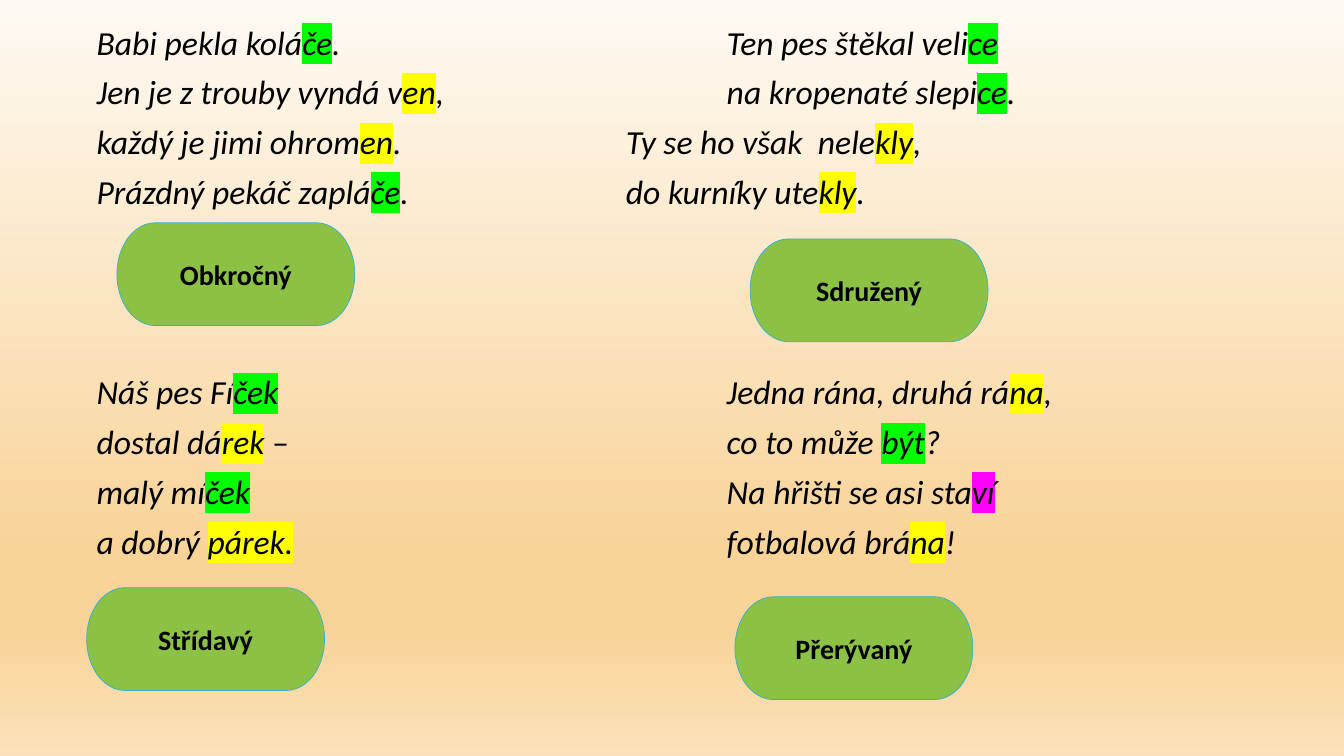
from lxml import etree
from pptx import Presentation
from pptx.dml.color import RGBColor
from pptx.enum.shapes import MSO_SHAPE
from pptx.enum.text import MSO_ANCHOR, PP_ALIGN
from pptx.oxml.ns import qn
from pptx.util import Inches, Pt

COLORS = {
    "text": "000000", "label": "8BC145", "label line": "36AFCE",
    "green": "00FF00", "yellow": "FFFF00", "pink": "FF00FF",
}
BACKGROUND_STOPS = [(0, "FEFAF3"), (74, "F9D398"), (83, "F9D398"), (100, "FBE2BA")]
FONT = "Calibri"
TERMINATOR = MSO_SHAPE.FLOWCHART_TERMINATOR
MIDDLE, CENTER = MSO_ANCHOR.MIDDLE, PP_ALIGN.CENTER

# Each line: tab stop of its right half, then spans; a (text, color) span is a rhyme.
FAR, NEAR = 6.25, 5.25
STANZAS = [
    [
        (FAR, ["Babi pekla kolá", ("če", "green"), ".\tTen pes štěkal veli", ("ce", "green")]),
        (FAR, ["Jen je z trouby vyndá v", ("en", "yellow"),
               ",\tna kropenaté slepi", ("ce", "green"), "."]),
        (NEAR, ["každý je jimi ohrom", ("en", "yellow"),
                ".\tTy se ho však  nele", ("kly", "yellow"), ","]),
        (NEAR, ["Prázdný pekáč zaplá", ("če", "green"),
                ".\tdo kurníky ute", ("kly", "yellow"), "."]),
    ],
    [
        (FAR, ["Náš pes Fí", ("ček", "green"), "\tJedna rána, druhá rá", ("na", "yellow"), ","]),
        (FAR, ["dostal dá", ("rek", "yellow"), " –\tco to může ", ("být", "green"), "?"]),
        (FAR, ["malý mí", ("ček", "green"), "\tNa hřišti se asi sta", ("ví", "pink")]),
        (FAR, ["a dobrý ", ("párek.", "yellow"), "\tfotbalová brá", ("na", "yellow"), "!"]),
    ],
]
LINE_GAP, STANZA_GAP = 9.6, 117.4
RHYME_LABELS = [
    ("Obkročný", 1.16, 2.21), ("Střídavý", 0.86, 5.83),
    ("Sdružený", 7.44, 2.37), ("Přerývaný", 7.29, 5.92),
]
LABEL_SIZE = (2.36, 1.02)


def rgb(name):
    return RGBColor.from_string(COLORS[name])


def style(span, size, bold=False, italic=False):
    font = span.font
    font.name, font.size, font.bold, font.italic = FONT, Pt(size), bold, italic
    font.color.rgb = rgb("text")


def add_color(parent, value):
    etree.SubElement(parent, qn("a:srgbClr"), val=value)


def highlight(span, color):
    mark = etree.Element(qn("a:highlight"))
    add_color(mark, COLORS[color])
    span.font._element.find(qn("a:solidFill")).addnext(mark)


def set_tab_stop(para, inches):
    tabs = etree.SubElement(para._p.get_or_add_pPr(), qn("a:tabLst"))
    etree.SubElement(tabs, qn("a:tab"), pos=str(Inches(inches)), algn="l")


def paint_background(page):
    fill = page.background.fill
    fill.gradient()
    fill.gradient_angle = 270
    stops = page._element.find(".//" + qn("a:gsLst"))
    for stop in list(stops):
        stops.remove(stop)
    for percent, value in BACKGROUND_STOPS:
        add_color(etree.SubElement(stops, qn("a:gs"), pos=str(percent * 1000)), value)


def add_poems(page):
    box = page.shapes.add_textbox(Inches(0.86), Inches(0.21), Inches(12.37), Inches(7.01))
    frame = box.text_frame
    frame.word_wrap = True
    for stanza_index, stanza in enumerate(STANZAS):
        for line_index, (tab_stop, parts) in enumerate(stanza):
            first = stanza_index == line_index == 0
            para = frame.paragraphs[0] if first else frame.add_paragraph()
            new_stanza = stanza_index > 0 and line_index == 0
            para.line_spacing = 0.9
            para.space_before = Pt(STANZA_GAP if new_stanza else LINE_GAP)
            set_tab_stop(para, tab_stop)
            for part in parts:
                text, color = (part, None) if isinstance(part, str) else part
                span = para.add_run()
                span.text = text
                style(span, 24, italic=True)
                if color:
                    highlight(span, color)


def add_rhyme_label(page, text, left, top):
    shape = page.shapes.add_shape(TERMINATOR, *map(Inches, (left, top, *LABEL_SIZE)))
    shape.shadow.inherit = False
    shape.fill.solid()
    shape.fill.fore_color.rgb = rgb("label")
    shape.line.color.rgb = rgb("label line")
    shape.line.width = Pt(0.5)
    frame = shape.text_frame
    frame.text = text
    frame.vertical_anchor = MIDDLE
    para = frame.paragraphs[0]
    para.alignment = CENTER
    style(para.runs[0], 20, bold=True)


def main():
    deck = Presentation()
    deck.slide_width, deck.slide_height = Inches(13.33), Inches(7.5)
    page = deck.slides.add_slide(deck.slide_layouts[6])
    paint_background(page)
    add_poems(page)
    for label in RHYME_LABELS:
        add_rhyme_label(page, *label)
    deck.save("out.pptx")


if __name__ == "__main__":
    main()
